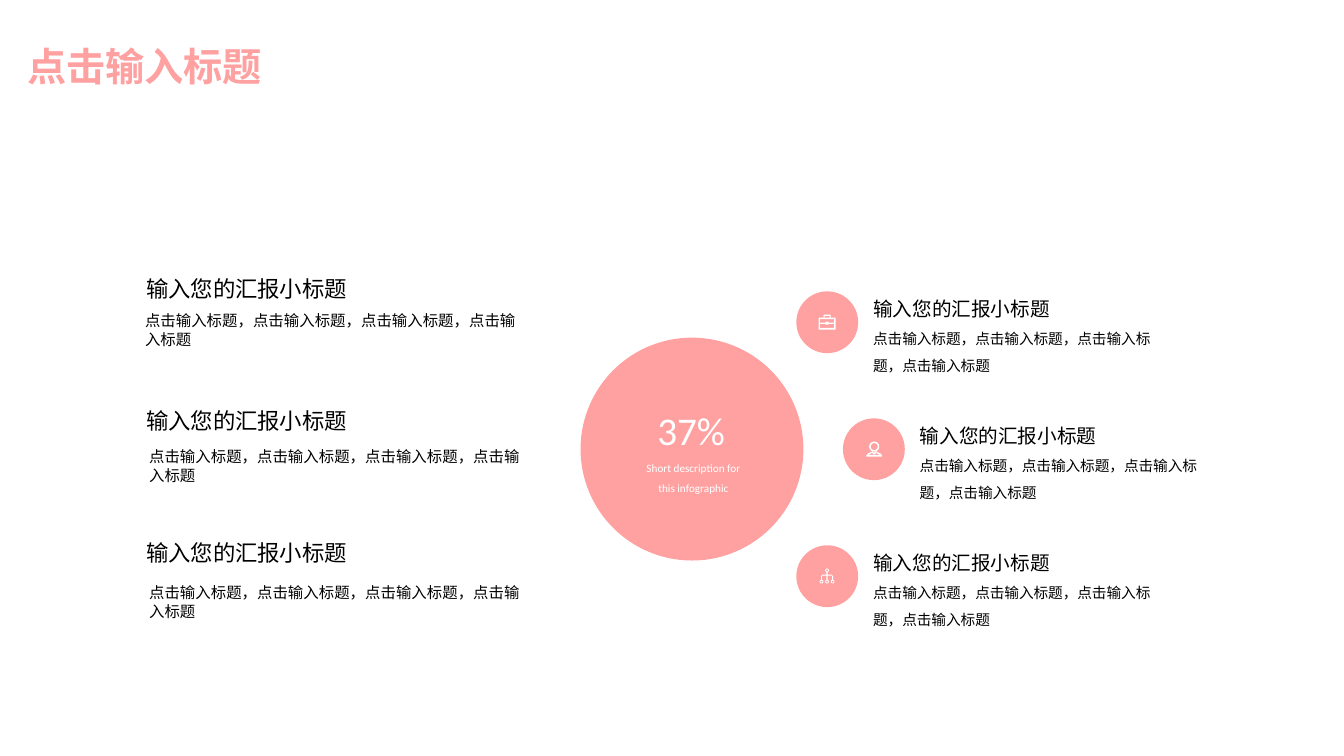
from dataclasses import dataclass
from math import cos, pi, sin

from pptx import Presentation
from pptx.dml.color import RGBColor
from pptx.enum.shapes import MSO_SHAPE
from pptx.enum.text import MSO_ANCHOR, MSO_AUTO_SIZE, PP_ALIGN
from pptx.shapes.autoshape import Shape
from pptx.slide import Slide
from pptx.text.text import TextFrame
from pptx.util import Pt

FONT = "Calibri"
PINK, WHITE, BLACK = "FFA1A1", "FFFFFF", "000000"
HEADING = "输入您的汇报小标题"
DESCRIPTION = "，".join(["点击输入标题"] * 4)

Contour = list[tuple[float, float]]


@dataclass(frozen=True)
class Box:
    left: float
    top: float
    width: float
    height: float


@dataclass(frozen=True)
class TextStyle:
    size: float
    color: str = BLACK
    bold: bool = False
    line_spacing: float = 1.0
    align: PP_ALIGN = PP_ALIGN.LEFT
    anchor: MSO_ANCHOR = MSO_ANCHOR.MIDDLE
    inset: float = 2.88
    wrap: bool = True


@dataclass(frozen=True)
class Card:
    badge_left: float
    icon_left: float
    icon: list[Contour]


TITLE_STYLE = TextStyle(28, PINK, bold=True, anchor=MSO_ANCHOR.TOP, inset=3.6, wrap=False)
CARD_HEADING = TextStyle(14, line_spacing=0.8, wrap=False)
CARD_BODY = TextStyle(10.5, line_spacing=1.5)
LIST_HEADING = TextStyle(16, line_spacing=0.9, inset=2.16)
LIST_BODY = TextStyle(11, anchor=MSO_ANCHOR.TOP, inset=3.6)
PERCENT = TextStyle(28, WHITE, wrap=False)
CAPTION = TextStyle(8, WHITE, line_spacing=1.5, align=PP_ALIGN.CENTER)


def circle(x: float, y: float, radius: float) -> Contour:
    angles = [2 * pi * step / 32 for step in range(32)]
    return [(x + radius * cos(angle), y + radius * sin(angle)) for angle in angles]


def ring(x: float, y: float, outer: float, inner: float) -> list[Contour]:
    return [circle(x, y, outer), circle(x, y, inner)]


# Icon outlines are in points; inner contours become holes.
BRIEFCASE = [
    [(0, 2.2), (3.6, 2.2), (3.6, 0), (8.6, 0), (8.6, 2.2), (12.2, 2.2), (12.2, 10.8), (0, 10.8)],
    [(4.3, 1), (7.9, 1), (7.9, 2.2), (4.3, 2.2)],
    [(1, 3.2), (11.2, 3.2), (11.2, 5.8), (7.2, 5.8), (7.2, 5), (5, 5), (5, 5.8), (1, 5.8)],
    [(1, 6.6), (5, 6.6), (5, 7.2), (7.2, 7.2), (7.2, 6.6), (11.2, 6.6), (11.2, 9.6), (1, 9.6)],
]
PERSON = ring(5.8, 3.6, 3.6, 2.5) + [
    [(0, 10.2), (1.4, 8.4), (4.3, 7.2), (5.8, 7.9), (7.2, 7.2),
     (10.1, 8.4), (11.5, 10.2), (11.2, 10.8), (0.4, 10.8)],
    [(1.4, 9.6), (4.3, 8.1), (5.4, 9.1), (6.2, 9.1), (7.2, 8.1), (10.1, 9.6)],
]
HIERARCHY = [
    [(5, 2.5), (5.8, 2.5), (5.8, 4.3), (8.6, 4.3), (9.7, 5.4), (9.7, 8.2), (9, 8.2),
     (9, 5.4), (8.6, 5), (5.8, 5), (5.8, 8.2), (5, 8.2), (5, 5), (2.2, 5),
     (1.8, 5.4), (1.8, 8.2), (1.1, 8.2), (1.1, 5.4), (2.2, 4.3), (5, 4.3)],
]
for node_x, node_y in [(5.4, 1.3), (1.4, 9.4), (5.4, 9.4), (9.4, 9.4)]:
    HIERARCHY += ring(node_x, node_y, 1.3, 0.7)

CARDS = [
    Card(568.8, 15.9, BRIEFCASE),
    Card(602.1, 16.6, PERSON),
    Card(568.8, 16.6, HIERARCHY),
]


def color(value: str) -> RGBColor:
    return RGBColor.from_string(value)


def place(shape: Shape, box: Box) -> None:
    shape.left, shape.top = Pt(box.left), Pt(box.top)
    shape.width, shape.height = Pt(box.width), Pt(box.height)


def write(frame: TextFrame, text: str, style: TextStyle) -> None:
    frame.text = text
    frame.word_wrap = style.wrap
    frame.auto_size = MSO_AUTO_SIZE.SHAPE_TO_FIT_TEXT
    frame.vertical_anchor = style.anchor
    frame.margin_top = frame.margin_bottom = Pt(style.inset)
    side_inset = 7.2 if style.inset == 3.6 else style.inset
    frame.margin_left = frame.margin_right = Pt(side_inset)
    for paragraph in frame.paragraphs:
        paragraph.alignment = style.align
        paragraph.line_spacing = style.line_spacing
        paragraph.font.name = FONT
        paragraph.font.size = Pt(style.size)
        paragraph.font.bold = style.bold
        paragraph.font.color.rgb = color(style.color)


def add_text(slide: Slide, box: Box, text: str, style: TextStyle) -> None:
    shape = slide.shapes.add_textbox(0, 0, 0, 0)
    write(shape.text_frame, text, style)
    place(shape, box)


def paint(shape: Shape, fill: str) -> None:
    shape.shadow.inherit = False
    shape.fill.solid()
    shape.fill.fore_color.rgb = color(fill)
    shape.line.fill.background()


def add_disc(slide: Slide, left: float, top: float, diameter: float) -> None:
    shape = slide.shapes.add_shape(
        MSO_SHAPE.OVAL, Pt(left), Pt(top), Pt(diameter), Pt(diameter))
    paint(shape, PINK)


def add_icon(slide: Slide, left: float, top: float, contours: list[Contour]) -> None:
    units = [[(x * 100, y * 100) for x, y in contour] for contour in contours]
    builder = slide.shapes.build_freeform(*units[0][0], scale=Pt(1) / 100)
    for index, contour in enumerate(units):
        if index:
            builder.move_to(*contour[0])
        builder.add_line_segments(contour[1:], close=True)
    paint(builder.convert_to_shape(Pt(left), Pt(top)), WHITE)


def add_card(slide: Slide, card: Card, top: float) -> None:
    text_left = card.badge_left + 52
    add_disc(slide, card.badge_left, top, 44.2)
    add_text(slide, Box(text_left, top + 4.3, 133.2, 19.4), HEADING, CARD_HEADING)
    add_text(slide, Box(text_left, top + 19.4, 208.8, 41.8), DESCRIPTION, CARD_BODY)
    add_icon(slide, card.badge_left + card.icon_left, top + 16.6, card.icon)


def main() -> None:
    presentation = Presentation()
    presentation.slide_width, presentation.slide_height = Pt(960), Pt(540)
    slide = presentation.slides.add_slide(presentation.slide_layouts[5])

    title = slide.shapes.title
    write(title.text_frame, "点击输入标题", TITLE_STYLE)
    place(title, Box(12.2, 26.6, 184.3, 41))

    add_disc(slide, 414.7, 241.2, 159.2)
    add_text(slide, Box(466.6, 287.3, 61.9, 39.6), "37%", PERCENT)
    add_text(slide, Box(446.4, 322.6, 97.9, 33.1),
             "Short description for\nthis infographic", CAPTION)

    for row, card in enumerate(CARDS):
        add_card(slide, card, 208.1 + 90.7 * row)

    for row, body_left in enumerate([96.5, 99.4, 99.4]):
        add_text(slide, Box(102.2, 196.6 + 94.3 * row, 281.5, 21.6), HEADING, LIST_HEADING)
        add_text(slide, Box(body_left, 218.9 + 97.2 * row, 287.3, 33.8), DESCRIPTION, LIST_BODY)

    presentation.save("out.pptx")


if __name__ == "__main__":
    main()
